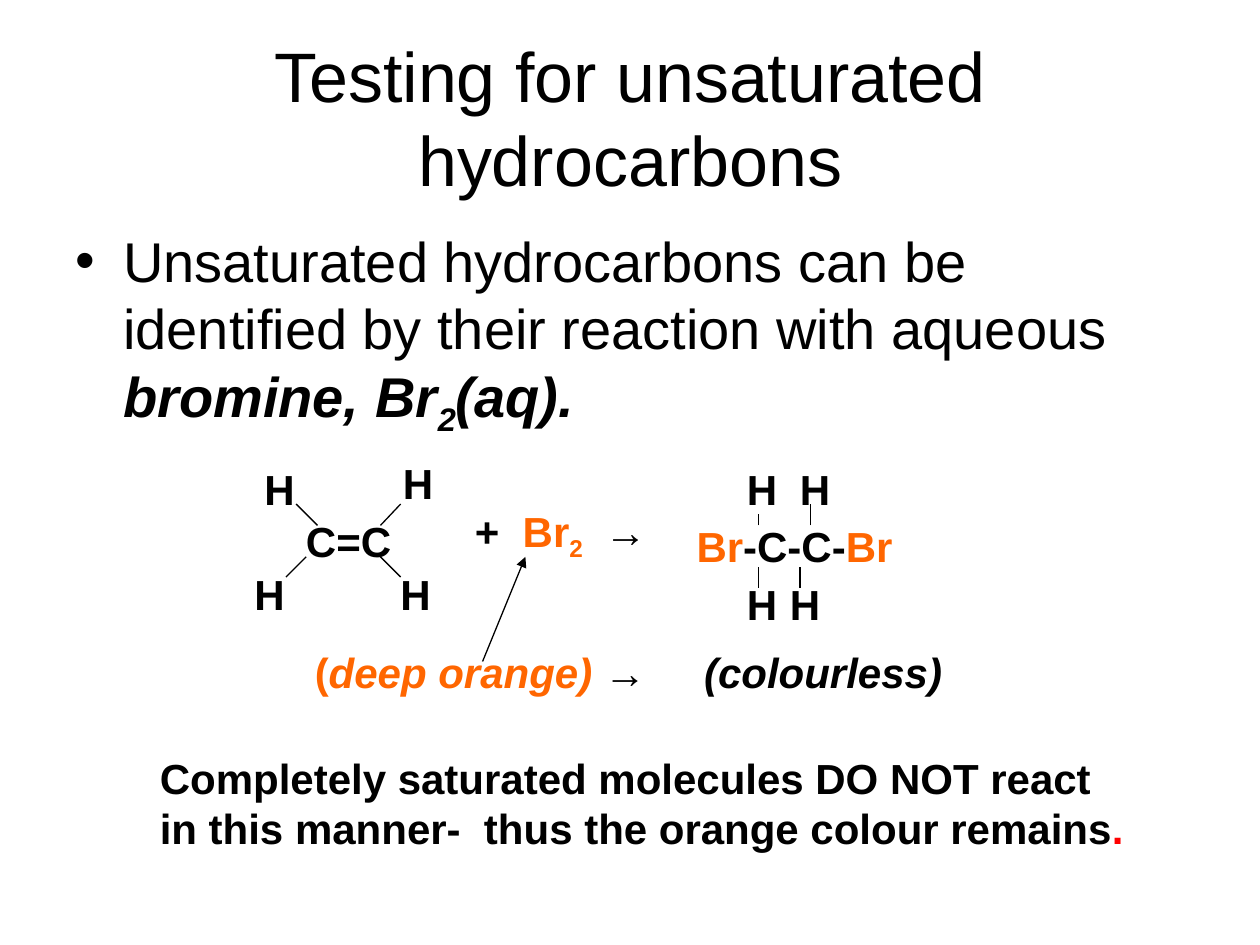
from lxml import etree
from pptx import Presentation
from pptx.dml.color import RGBColor
from pptx.enum.shapes import MSO_CONNECTOR
from pptx.enum.text import MSO_ANCHOR, PP_ALIGN
from pptx.oxml.ns import qn
from pptx.util import Inches, Pt

LINE = MSO_CONNECTOR.STRAIGHT
TOP, MIDDLE = MSO_ANCHOR.TOP, MSO_ANCHOR.MIDDLE
LEFT, CENTER = PP_ALIGN.LEFT, PP_ALIGN.CENTER
FONT = "Arial"
COLORS = {"black": "000000", "orange": "FF6600", "red": "FF0000"}

# Content: a span is (text, color, extra styles)
TITLE = [("Testing for unsaturated hydrocarbons", "black", "")]
STATEMENT = [
    ("Unsaturated hydrocarbons can be identified by their reaction with aqueous ", "black", ""),
    ("bromine, Br", "black", "bold italic"),
    ("2", "black", "bold italic sub"),
    ("(aq).", "black", "bold italic"),
]
ETHENE = [("C=C", "black", "bold")]
HYDROGEN = [("H", "black", "bold")]
REAGENT = [
    ("+\t", "black", "bold"),
    ("Br", "orange", "bold"),
    ("2", "orange", "bold sub"),
    ("\t→", "black", "bold"),
]
PRODUCT = [
    ("Br", "orange", "bold"),
    ("-C-C-", "black", "bold"),
    ("Br", "orange", "bold"),
]
COLOUR_CHANGE = [
    ("\t(", "orange", "bold"),
    ("deep orange) ", "orange", "bold italic"),
    ("→\t(colourless)", "black", "bold italic"),
]
CONCLUSION = [
    ("Completely saturated molecules DO NOT react in this manner-  "
     "thus the orange colour remains", "black", "bold"),
    (".", "red", "bold"),
]

# Molecule geometry in inches
HYDROGEN_SPOTS = [
    (2, 3.63), (3.1, 3.58), (1.92, 4.46), (3.08, 4.46),      # ethene
    (5.83, 3.63), (6.25, 3.63), (5.83, 4.54), (6.17, 4.54),  # product
]
BONDS = [
    (2.27, 4.58, 2.43, 4.42), (2.35, 4, 2.52, 4.17),
    (3.02, 4.42, 3.18, 4.58), (3.02, 4.17, 3.18, 4),
    (6.02, 4.17, 6.02, 4.08), (6.02, 4.5, 6.02, 4.67),
    (6.35, 4.5, 6.35, 4.67), (6.43, 4.17, 6.43, 4),
]
POINTER = (3.83, 5.25, 4.17, 4.42)


def add_text(page, spans, left, top, width, height=0.5, size=24, wrap=False,
             align=LEFT, anchor=TOP, tabs=()):
    box = page.shapes.add_textbox(*map(Inches, (left, top, width, height)))
    frame = box.text_frame
    frame.word_wrap = wrap
    frame.vertical_anchor = anchor
    para = frame.paragraphs[0]
    para.alignment = align
    para.font.size = Pt(size)
    para.font.name = FONT
    for text, color, styles in spans:
        span = para.add_run()
        span.text = text
        span.font.color.rgb = RGBColor.from_string(COLORS[color])
        span.font.bold = "bold" in styles
        span.font.italic = "italic" in styles
        if "sub" in styles:
            span._r.get_or_add_rPr().set("baseline", "-25000")
    if tabs:
        properties = para._p.get_or_add_pPr()
        stops = etree.Element(qn("a:tabLst"))
        for position in tabs:
            etree.SubElement(stops, qn("a:tab"), pos=str(Inches(position)), algn="l")
        # Tab stops come before the default run properties
        properties.insert(len(properties) - 1, stops)
    return para


def set_bullet(para, indent, mark):
    properties = para._p.get_or_add_pPr()
    properties.set("marL", str(Inches(indent)))
    properties.set("indent", str(-Inches(indent)))
    properties.insert(0, etree.Element(qn("a:buFont"), typeface=FONT))
    properties.insert(1, etree.Element(qn("a:buChar"), char=mark))


def add_line(page, ends, arrow=False):
    line = page.shapes.add_connector(LINE, *map(Inches, ends))
    line.line.color.rgb = RGBColor.from_string(COLORS["black"])
    line.line.width = Pt(0.75)
    if arrow:
        etree.SubElement(line.line._get_or_add_ln(), qn("a:tailEnd"), type="triangle")
    etree.SubElement(line._element.spPr, qn("a:effectLst"))


def main():
    deck = Presentation()
    deck.slide_width, deck.slide_height = Inches(10), Inches(7.5)
    page = deck.slides.add_slide(deck.slide_layouts[6])

    # Title and bulleted statement
    add_text(page, TITLE, 0.5, 0.3, 9, 1.25, 40, True, CENTER, MIDDLE)
    statement = add_text(page, STATEMENT, 0.5, 1.75, 9, 5.17, 32, True)
    set_bullet(statement, 0.38, "•")

    # Reaction equation
    add_text(page, ETHENE, 2.33, 4.04, 0.88)
    add_text(page, REAGENT, 3.67, 3.96, 1.75, wrap=True, tabs=(0.38, 1.03))
    add_text(page, PRODUCT, 5.43, 4.08, 1.76)
    for left, top in HYDROGEN_SPOTS:
        add_text(page, HYDROGEN, left, top, 0.44)
    for bond in BONDS:
        add_line(page, bond)

    # Colour change and conclusion
    add_text(page, COLOUR_CHANGE, 0.92, 5.08, 8.17, wrap=True, tabs=(1.48, 4.57))
    add_line(page, POINTER, arrow=True)
    add_text(page, CONCLUSION, 1.17, 5.92, 7.92, 0.91, wrap=True)

    deck.save("out.pptx")


if __name__ == "__main__":
    main()
